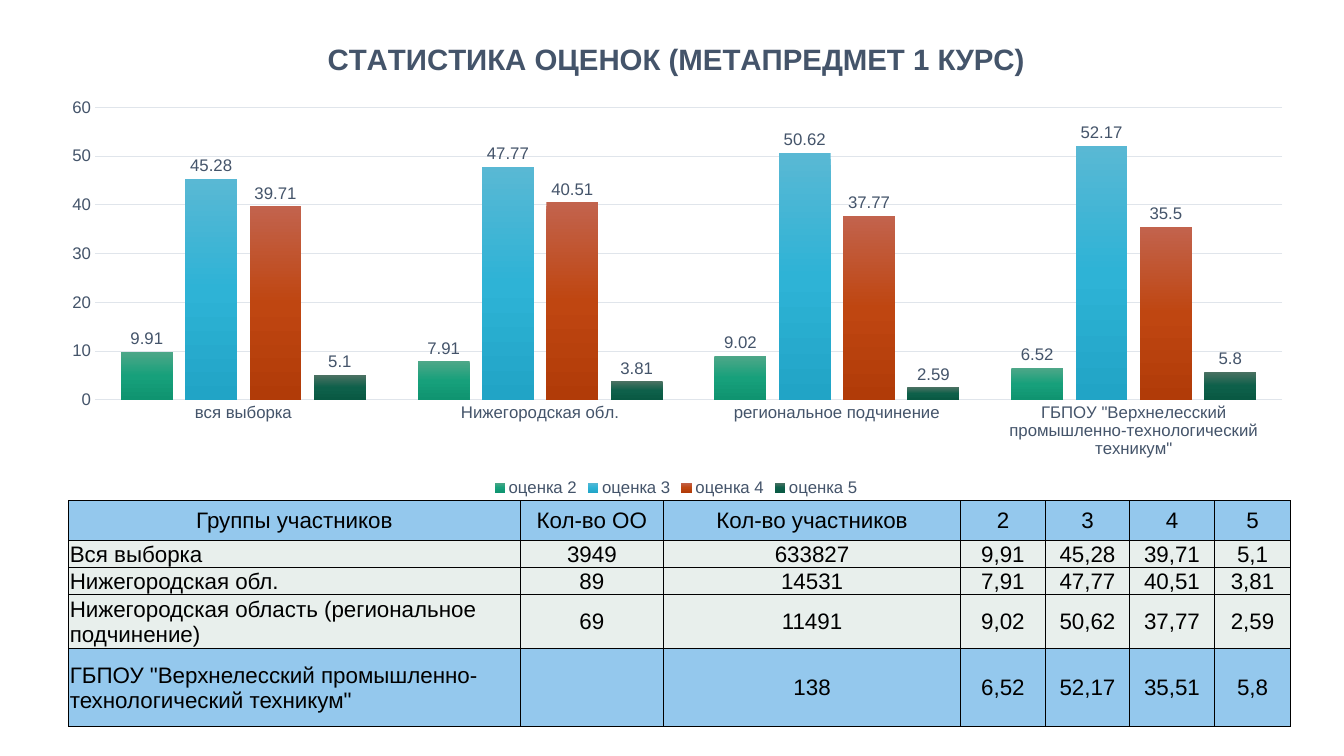
"""Builds the grade statistics slide: a clustered column chart above a table."""
from copy import deepcopy
from dataclasses import dataclass

from pptx import Presentation
from pptx.chart.data import CategoryChartData
from pptx.dml.color import RGBColor
from pptx.enum.chart import XL_CHART_TYPE, XL_LABEL_POSITION, XL_LEGEND_POSITION, XL_TICK_MARK
from pptx.enum.text import MSO_ANCHOR, PP_ALIGN
from pptx.oxml import parse_xml
from pptx.oxml.ns import nsdecls, qn
from pptx.util import Cm, Pt


@dataclass(frozen=True)
class Theme:
    """Colours, font and type sizes of the slide."""
    font: str = "Arial"
    title_size: float = 21
    chart_size: float = 12
    table_size: float = 16
    slate: str = "44546A"
    grid: str = "E0E5EB"
    black: str = "000000"
    accent_fill: str = "94C8ED"
    plain_fill: str = "E8EFEC"
    gradients: tuple = (
        ("4EA788", "17A07B", "0F9470"),
        ("59B8D4", "2EB3D6", "21A4C6"),
        ("C2634D", "BF4611", "B13B08"),
        ("4C7263", "0E604A", "095943"),
    )


TITLE = "СТАТИСТИКА ОЦЕНОК (МЕТАПРЕДМЕТ 1 КУРС)"
GROUPS = ("вся выборка", "Нижегородская обл.", "региональное подчинение",
          'ГБПОУ "Верхнелесский промышленно-технологический техникум"')
GRADES = {
    "оценка 2": (9.91, 7.91, 9.02, 6.52),
    "оценка 3": (45.28, 47.77, 50.62, 52.17),
    "оценка 4": (39.71, 40.51, 37.77, 35.5),
    "оценка 5": (5.1, 3.81, 2.59, 5.8),
}
TABLE_ROWS = (
    ("Группы участников", "Кол-во ОО", "Кол-во участников", "2", "3", "4", "5"),
    ("Вся выборка", "3949", "633827", "9,91", "45,28", "39,71", "5,1"),
    ("Нижегородская обл.", "89", "14531", "7,91", "47,77", "40,51", "3,81"),
    ("Нижегородская область (региональное подчинение)", "69", "11491",
     "9,02", "50,62", "37,77", "2,59"),
    (GROUPS[-1], "", "138", "6,52", "52,17", "35,51", "5,8"),
)
COLUMN_WIDTHS = (11.38, 3.61, 7.49, 2.13, 2.13, 2.13, 1.93)
ROW_HEIGHTS = (0.99, 0.69, 0.69, 1.35, 1.96)


class SlideBuilder:
    """Adds styled elements to the current slide."""

    def __init__(self, page, theme):
        """Keep the slide and its style."""
        self.page = page
        self.theme = theme

    def style_font(self, font, size, color, bold=False):
        """Apply the theme font with a size and a colour."""
        font.name = self.theme.font
        font.size = Pt(size)
        font.bold = bold
        font.color.rgb = RGBColor.from_string(color)

    def style_chart_font(self, font):
        """Apply the common chart text style."""
        self.style_font(font, self.theme.chart_size, self.theme.slate)

    def place(self, element, index, target="", **fractions):
        """Give a chart part a manual layout in fractions of the chart."""
        for old in element.findall(qn("c:layout")):
            element.remove(old)
        modes = "".join(f'<c:{key}Mode val="edge"/>' for key in ("x", "y"))
        values = "".join(f'<c:{key} val="{value}"/>' for key, value in fractions.items())
        element.insert(index, parse_xml(
            f'<c:layout {nsdecls("c")}><c:manualLayout>{target}{modes}{values}'
            "</c:manualLayout></c:layout>"))

    def add_chart(self, left, top, width, height):
        """Add the column chart of grades by group."""
        data = CategoryChartData()
        data.categories = GROUPS
        for name, values in GRADES.items():
            data.add_series(name, values)
        chart = self.page.shapes.add_chart(
            XL_CHART_TYPE.COLUMN_CLUSTERED, Cm(left), Cm(top), Cm(width), Cm(height), data).chart
        self.style_chart_font(chart.font)
        self.add_chart_title(chart)
        self.style_axes(chart)
        chart.has_legend = True
        chart.legend.position = XL_LEGEND_POSITION.BOTTOM
        chart.legend.include_in_layout = False
        self.style_chart_font(chart.legend.font)
        plot = chart.plots[0]
        plot.gap_width = 100
        plot.overlap = -24
        plot.vary_by_categories = False
        for series, colors in zip(plot.series, self.theme.gradients):
            self.style_series(series, colors)
        self.place(chart._chartSpace.chart.plotArea, 0, '<c:layoutTarget val="inner"/>',
                   x=0.04, y=0.18, w=0.94, h=0.61)

    def add_chart_title(self, chart):
        """Write the heading above the columns."""
        chart.has_title = True
        span = chart.chart_title.text_frame.paragraphs[0].add_run()
        span.text = TITLE
        self.style_font(span.font, self.theme.title_size, self.theme.slate, bold=True)
        chart.chart_title.include_in_layout = False
        self.place(chart.chart_title._element, 1, x=0.22, y=0.03)

    def style_axes(self, chart):
        """Style both axes and the gridlines."""
        for axis in (chart.category_axis, chart.value_axis):
            axis.major_tick_mark = axis.minor_tick_mark = XL_TICK_MARK.NONE
            self.style_chart_font(axis.tick_labels.font)
        scale = chart.value_axis
        scale.minimum_scale, scale.maximum_scale, scale.major_unit = 0, 60, 10
        scale.format.line.fill.background()
        for line in (chart.category_axis.format.line, scale.major_gridlines.format.line):
            line.color.rgb = RGBColor.from_string(self.theme.grid)
            line.width = Pt(0.75)

    def style_series(self, series, colors):
        """Fill a series from top to bottom and label its values."""
        fill = series.format.fill
        fill.gradient()
        fill.gradient_angle = 270
        stop_list = series._element.find(".//" + qn("a:gsLst"))
        stop_list.append(deepcopy(stop_list[0]))
        for stop, color, position in zip(fill.gradient_stops, colors, (0, 0.5, 1)):
            stop.color.rgb = RGBColor.from_string(color)
            stop.position = position
        series.invert_if_negative = False
        labels = series.data_labels
        labels.show_value = True
        labels.position = XL_LABEL_POSITION.OUTSIDE_END
        self.style_chart_font(labels.font)

    def add_table(self, left, top):
        """Add the table of participants and grades."""
        table = self.page.shapes.add_table(
            len(TABLE_ROWS), len(COLUMN_WIDTHS), Cm(left), Cm(top),
            Cm(sum(COLUMN_WIDTHS)), Cm(sum(ROW_HEIGHTS))).table
        table.first_row = table.horz_banding = False
        for column, width in zip(table.columns, COLUMN_WIDTHS):
            column.width = Cm(width)
        for row, height in zip(table.rows, ROW_HEIGHTS):
            row.height = Cm(height)
        for row_index, texts in enumerate(TABLE_ROWS):
            accent = row_index in (0, len(TABLE_ROWS) - 1)
            fill = self.theme.accent_fill if accent else self.theme.plain_fill
            for column_index, text in enumerate(texts):
                centred = row_index == 0 or column_index > 0
                self.fill_cell(table.cell(row_index, column_index), text, fill, centred)

    def fill_cell(self, cell, text, fill, centred):
        """Write and style one table cell."""
        cell.margin_left = cell.margin_right = cell.margin_top = Cm(0.03)
        cell.margin_bottom = 0
        cell.vertical_anchor = MSO_ANCHOR.MIDDLE
        para = cell.text_frame.paragraphs[0]
        para.alignment = PP_ALIGN.CENTER if centred else PP_ALIGN.LEFT
        if text:
            span = para.add_run()
            span.text = text
            self.style_font(span.font, self.theme.table_size, self.theme.black)
        properties = cell._tc.get_or_add_tcPr()
        for side in ("lnL", "lnR", "lnT", "lnB"):
            properties.append(parse_xml(
                f'<a:{side} {nsdecls("a")} w="{Pt(1)}"><a:solidFill>'
                f'<a:srgbClr val="{self.theme.black}"/></a:solidFill></a:{side}>'))
        cell.fill.solid()
        cell.fill.fore_color.rgb = RGBColor.from_string(fill)


def main():
    """Build and save the deck."""
    deck = Presentation()
    deck.slide_width, deck.slide_height = Cm(33.87), Cm(19.05)
    builder = SlideBuilder(deck.slides.add_slide(deck.slide_layouts[6]), Theme())
    builder.add_chart(1.12, 0.53, 31.83, 12.09)
    builder.add_table(1.73, 12.62)
    deck.save("out.pptx")


if __name__ == "__main__":
    main()
